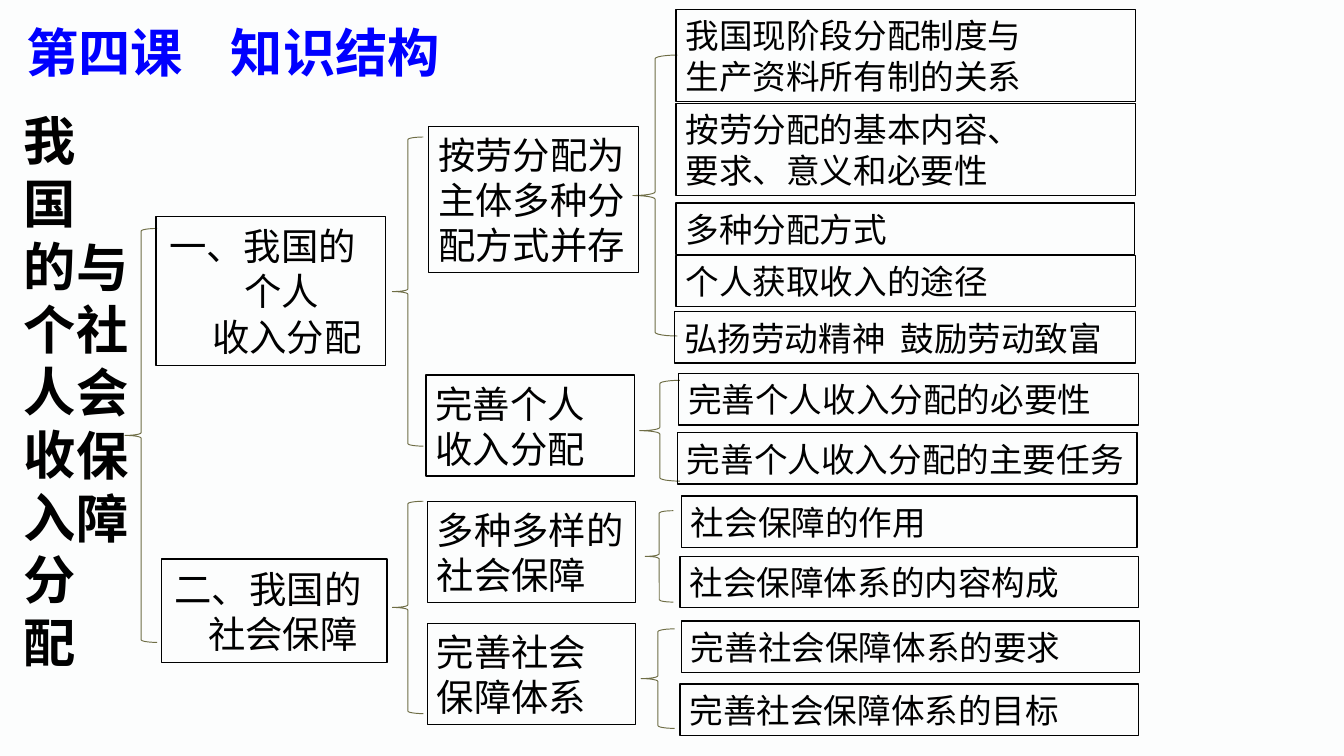
from math import ceil

from pptx import Presentation
from pptx.dml.color import RGBColor
from pptx.enum import shapes, text
from pptx.oxml import parse_xml
from pptx.oxml.ns import nsdecls
from pptx.util import Inches, Pt

BLACK = RGBColor(0, 0, 0)
BLUE = RGBColor(0, 0, 255)
OLIVE = RGBColor(0x6E, 0x6D, 0x45)
PAPER = RGBColor(0xFC, 0xFD, 0xFD)
HEADING_FONT = "Noto Sans CJK SC"
BODY_FONT = "Arial"
LINE_FACTOR = {HEADING_FONT: 1.2, BODY_FONT: 1.21}
WIDE, TIGHT = (0.1, 0.05), (0.07, 0.04)
TITLE_TAB, SPIRIT_TAB = 1.52, 1.61

# left, top, width, height, lines, colour, tab stop
HEADINGS = [
    (0.1, 0.1, 4.64, 0.57, ["第四课\t知识结构"], BLUE, TITLE_TAB),
    (0.08, 0.76, 0.57, 4.58, list("我国的个人收入分配"), BLACK, None),
    (0.47, 1.7, 0.57, 2.46, list("与社会保障"), BLACK, None),
]

# left, top, width, lines with their indents
UNITS = [
    (1.16, 1.61, 1.71, [("一、我国的", 0), ("个人", 0.56), ("收入分配", 0.32)]),
    (1.2, 4.16, 1.68, [("二、我国的", 0), ("社会保障", 0.25)]),
]

# left, top, width, lines
TOPICS = [
    (3.19, 0.94, 1.56, ["按劳分配为主体多种分配方式并存"]),
    (3.17, 2.79, 1.55, ["完善个人", "收入分配"]),
    (3.18, 3.73, 1.55, ["多种多样的社会保障"]),
    (3.18, 4.64, 1.55, ["完善社会", "保障体系"]),
]

POINTS = [
    (5.03, 0.07, 3.42, ["我国现阶段分配制度与", "生产资料所有制的关系"]),
    (5.03, 0.77, 3.42, ["按劳分配的基本内容、", "要求、意义和必要性"]),
    (5.03, 1.51, 3.41, ["多种分配方式"]),
    (5.03, 1.9, 3.42, ["个人获取收入的途径"]),
    (5.02, 2.32, 3.43, ["弘扬劳动精神\t鼓励劳动致富"]),
    (5.05, 2.78, 3.42, ["完善个人收入分配的必要性"]),
    (5.04, 3.22, 3.42, ["完善个人收入分配的主要任务"]),
    (5.07, 3.69, 3.39, ["社会保障的作用"]),
    (5.06, 4.14, 3.41, ["社会保障体系的内容构成"]),
    (5.07, 4.62, 3.41, ["完善社会保障体系的要求"]),
    (5.06, 5.09, 3.41, ["完善社会保障体系的目标"]),
]

# left, top, width, height
BRACES = [
    (0.93, 1.7, 0.24, 3.08),
    (2.92, 1.02, 0.23, 2.3),
    (2.92, 3.73, 0.23, 1.58),
    (4.71, 0.41, 0.33, 2.09),
    (4.76, 2.83, 0.3, 0.75),
    (4.8, 3.8, 0.21, 0.68),
    (4.77, 4.68, 0.25, 0.74),
]


def write(shape, lines, size, font, color, insets, tab, bold=False):
    frame = shape.text_frame
    frame.word_wrap = True
    frame.auto_size = text.MSO_AUTO_SIZE.NONE
    frame.vertical_anchor = text.MSO_ANCHOR.TOP
    frame.margin_left = frame.margin_right = Inches(insets[0])
    frame.margin_top = frame.margin_bottom = Inches(insets[1])
    for i, (words, indent) in enumerate(lines):
        paragraph = frame.add_paragraph() if i else frame.paragraphs[0]
        paragraph.text = words
        paragraph.alignment = text.PP_ALIGN.LEFT
        paragraph.line_spacing = Pt(size * LINE_FACTOR[font])
        properties = paragraph._p.get_or_add_pPr()
        if indent:
            properties.set("marL", str(Inches(indent)))
        if "\t" in words:
            properties.append(parse_xml(
                f'<a:tabLst {nsdecls("a")}><a:tab pos="{Inches(tab)}" algn="l"/></a:tabLst>'))
        paragraph.font.size = Pt(size)
        paragraph.font.bold = bold
        paragraph.font.color.rgb = color
        paragraph.font.name = font


def outline(slide, preset, place, color, weight):
    shape = slide.shapes.add_shape(preset, *map(Inches, place))
    shape.shadow.inherit = False
    shape.fill.background()
    shape.line.color.rgb = color
    shape.line.width = Pt(weight)
    return shape


def add_box(slide, left, top, width, lines, size, insets):
    side, edge = insets
    room = (width - 2 * side) * 72
    rows = sum(ceil(len(words) * size / room) for words, _ in lines)
    height = rows * size * LINE_FACTOR[BODY_FONT] / 72 + 2 * edge
    box = outline(slide, shapes.MSO_SHAPE.RECTANGLE, (left, top, width, height), BLACK, 0.75)
    write(box, lines, size, BODY_FONT, BLACK, insets, SPIRIT_TAB)


def add_heading(slide, left, top, width, height, lines, color, tab):
    heading = slide.shapes.add_textbox(*map(Inches, (left, top, width, height)))
    write(heading, [(words, 0) for words in lines], 28, HEADING_FONT, color, WIDE, tab, True)
    for paragraph in heading.text_frame.paragraphs:
        latin = paragraph.font._element.find("{*}latin")
        latin.addnext(parse_xml(f'<a:ea {nsdecls("a")} typeface="{HEADING_FONT}"/>'))


def main():
    deck = Presentation()
    deck.slide_width, deck.slide_height = Inches(10), Inches(10 * 9 / 16)
    slide = deck.slides.add_slide(deck.slide_layouts[6])
    slide.background.fill.solid()
    slide.background.fill.fore_color.rgb = PAPER

    for brace in BRACES:
        outline(slide, shapes.MSO_SHAPE.LEFT_BRACE, brace, OLIVE, 0.5)
    for left, top, width, lines in UNITS:
        add_box(slide, left, top, width, lines, 20, WIDE)
    for group, size in ((TOPICS, 20), (POINTS, 18)):
        for left, top, width, lines in group:
            add_box(slide, left, top, width, [(words, 0) for words in lines], size, TIGHT)
    for heading in HEADINGS:
        add_heading(slide, *heading)
    deck.save("out.pptx")


if __name__ == "__main__":
    main()
